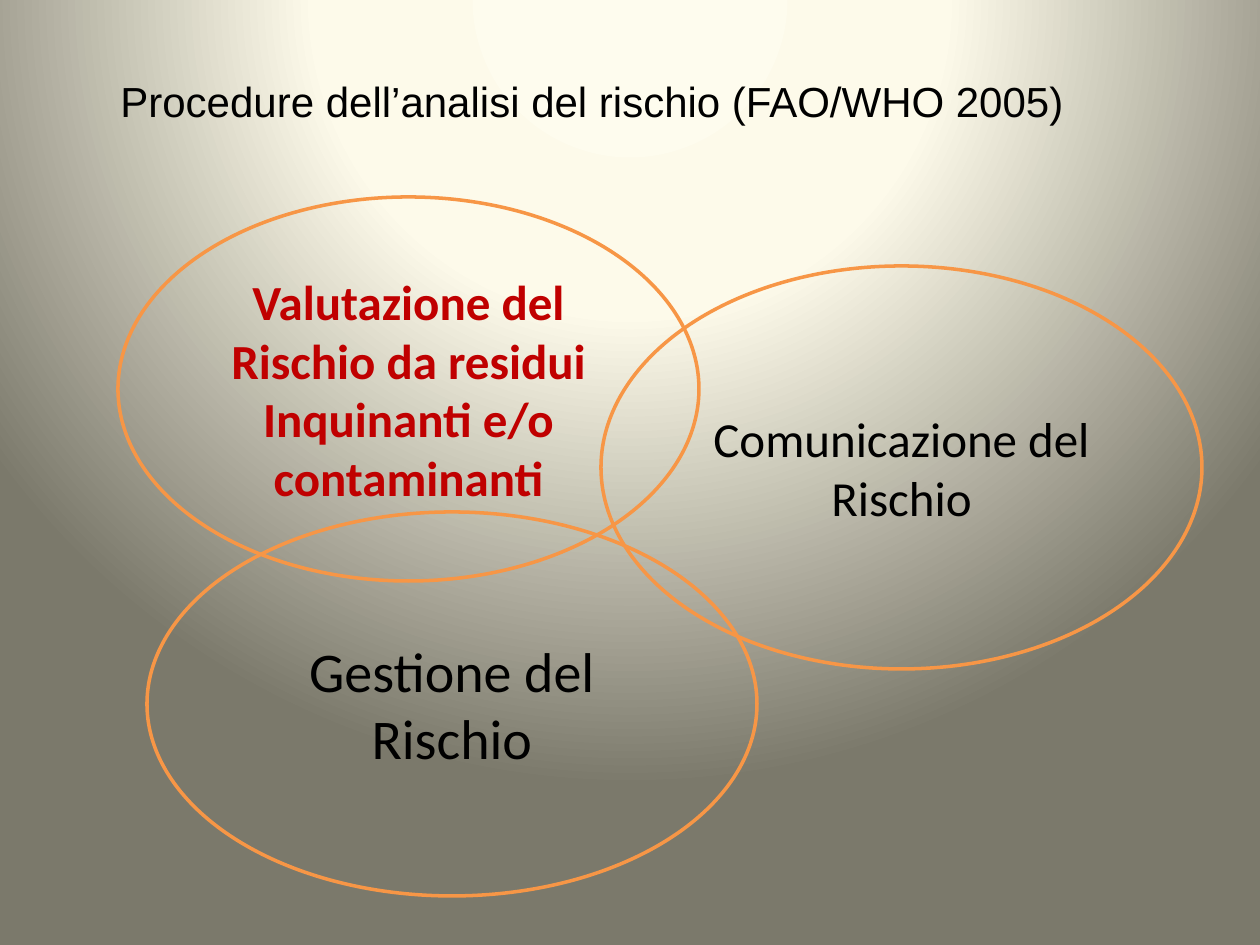
from dataclasses import dataclass

from lxml import etree
from pptx import Presentation
from pptx.dml.color import RGBColor
from pptx.enum.shapes import MSO_SHAPE
from pptx.enum.text import MSO_ANCHOR, MSO_AUTO_SIZE, PP_ALIGN
from pptx.oxml.ns import qn
from pptx.util import Emu, Pt

ELLIPSE = MSO_SHAPE.OVAL
MIDDLE = MSO_ANCHOR.MIDDLE
CENTER = PP_ALIGN.CENTER
FIT_SHAPE = MSO_AUTO_SIZE.SHAPE_TO_FIT_TEXT

EMU_PER_PX = 914400 // 126
SLIDE_SIZE = (1260, 945)


@dataclass(frozen=True)
class Theme:
    text: str = "000000"
    accent: str = "C00000"
    outline: str = "F79646"
    outline_width: int = 2
    title_font: str = "Arial"
    body_font: str = "Calibri"
    title_size: int = 24
    body_size: int = 28
    large_size: int = 32
    # (position in percent, colour)
    background: tuple = ((0, "FEFCEE"), (40, "FDFAEA"), (100, "7B796B"))


THEME = Theme()

TITLE = "Procedure dell’analisi del rischio (FAO/WHO 2005)"
TITLE_BOX = (108, 69, 1040, 64)

# text, (left, top, width, height), size, colour, bold; from back to front
ELLIPSES = [
    ("Comunicazione del Rischio", (601, 266, 601, 403),
     THEME.body_size, THEME.text, False),
    ("Gestione del Rischio", (147, 512, 610, 384),
     THEME.large_size, THEME.text, False),
    ("Valutazione del Rischio da residui Inquinanti e/o contaminanti",
     (118, 197, 581, 384), THEME.body_size, THEME.accent, True),
]

# Focus of the circular gradient, in percent from each edge
GRADIENT_FOCUS = {"l": 50, "t": -80, "r": 50, "b": 180}


def px(*lengths):
    return [Emu(length * EMU_PER_PX) for length in lengths]


def set_text(text_frame, text, font_name, size, color, bold=False):
    text_frame.text = text
    font = text_frame.paragraphs[0].runs[0].font
    font.name = font_name
    font.size = Pt(size)
    font.bold = bold
    font.color.rgb = RGBColor.from_string(color)


def set_background(slide):
    """Fill the slide with a circular gradient, which needs XML."""
    slide.background.fill.gradient()
    gradient = next(slide.element.iter(qn("a:gradFill")))
    for child in list(gradient):
        gradient.remove(child)
    stops = etree.SubElement(gradient, qn("a:gsLst"))
    for position, color in THEME.background:
        stop = etree.SubElement(stops, qn("a:gs"), pos=str(position * 1000))
        etree.SubElement(stop, qn("a:srgbClr"), val=color)
    circle = etree.SubElement(gradient, qn("a:path"), path="circle")
    focus = {edge: str(value * 1000) for edge, value in GRADIENT_FOCUS.items()}
    etree.SubElement(circle, qn("a:fillToRect"), **focus)


def add_ellipse(slide, text, box, size, color, bold):
    shape = slide.shapes.add_shape(ELLIPSE, *px(*box))
    shape.shadow.inherit = False
    shape.fill.background()
    shape.line.color.rgb = RGBColor.from_string(THEME.outline)
    shape.line.width = Pt(THEME.outline_width)
    text_frame = shape.text_frame
    text_frame.word_wrap = True
    text_frame.vertical_anchor = MIDDLE
    set_text(text_frame, text, THEME.body_font, size, color, bold)
    text_frame.paragraphs[0].alignment = CENTER


def add_title(slide):
    text_frame = slide.shapes.add_textbox(*px(*TITLE_BOX)).text_frame
    text_frame.word_wrap = False
    text_frame.auto_size = FIT_SHAPE
    set_text(text_frame, TITLE, THEME.title_font, THEME.title_size, THEME.text)


def main():
    presentation = Presentation()
    presentation.slide_width, presentation.slide_height = px(*SLIDE_SIZE)
    slide = presentation.slides.add_slide(presentation.slide_layouts[6])
    set_background(slide)
    for ellipse in ELLIPSES:
        add_ellipse(slide, *ellipse)
    add_title(slide)
    presentation.save("out.pptx")


if __name__ == "__main__":
    main()
